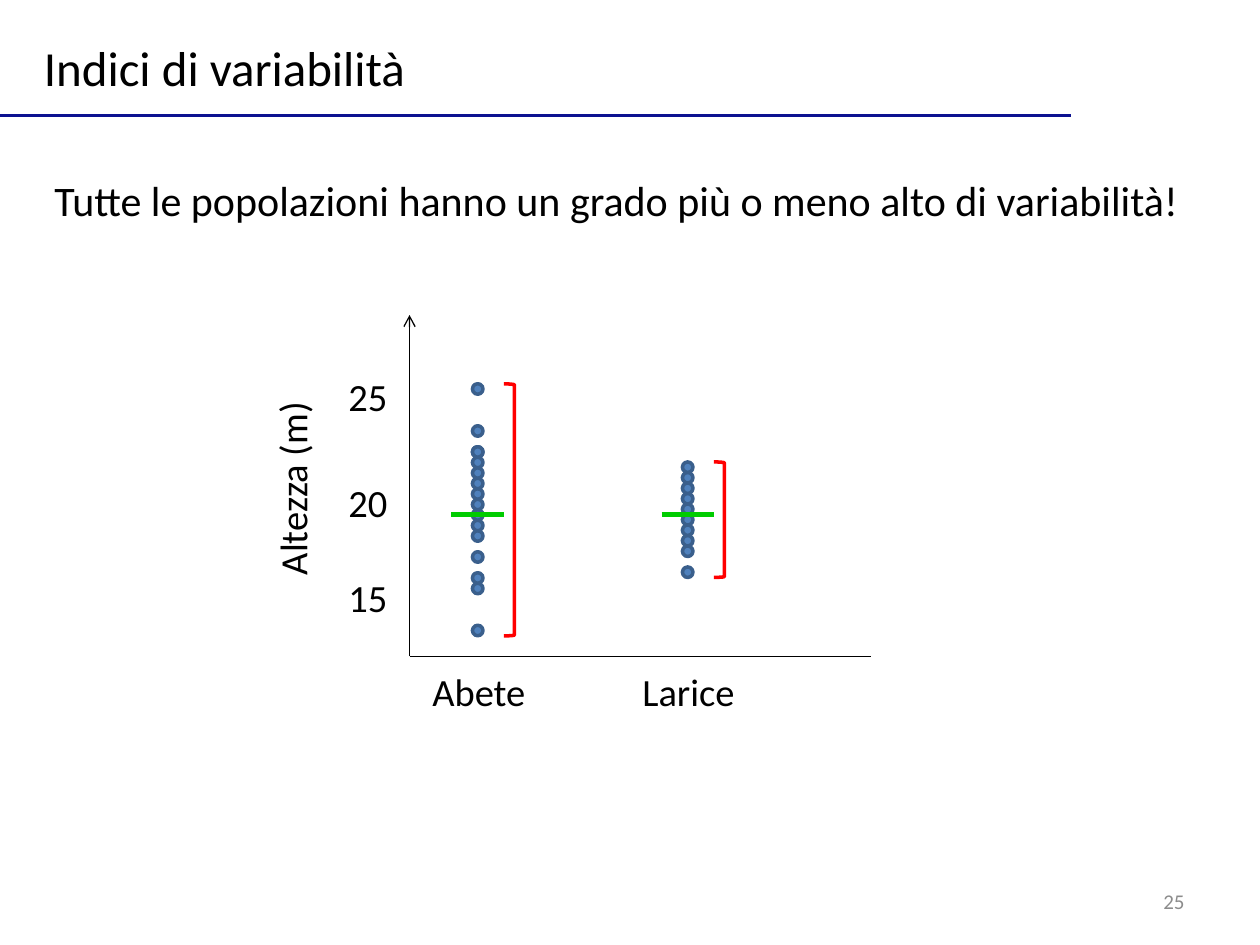
from dataclasses import dataclass

from lxml import etree
from pptx import Presentation
from pptx import util as u
from pptx.dml.color import RGBColor
from pptx.enum import shapes, text
from pptx.oxml import ns

COLORS = {"ink": "000000", "muted": "8C8C8C", "rule": "0C1290", "dot": "4F81BD",
          "dot_edge": "3A5F8C", "range": "FF0000", "mean": "00CC00"}
STEP = 6
MEAN_Y = 294


@dataclass
class Label:
    words: str
    left: float
    top: float
    width: float
    height: float = 34
    size: float = 22
    color: str = "ink"
    align: text.PP_ALIGN = text.PP_ALIGN.LEFT
    anchor: text.MSO_ANCHOR = text.MSO_ANCHOR.MIDDLE
    wrap: bool = True
    rotation: float = 0


@dataclass
class Rule:
    x1: float
    y1: float
    x2: float
    y2: float
    color: str = "ink"
    width: float = 0.75
    arrow: bool = False


@dataclass
class Species:
    name: str
    left: float
    label_width: float
    lowest: float
    steps: tuple[int, ...]
    range_top: float
    range_height: float


LABELS = [
    Label("25", 516, 500.5, 168, 28.75, 12, "muted", text.PP_ALIGN.RIGHT),
    Label("Indici di variabilità", 18, 18, 223, 41, 28, wrap=False),
    Label("Tutte le popolazioni hanno un grado più o meno alto di variabilità!",
          24, 96, 666, 36, 24, anchor=text.MSO_ANCHOR.TOP),
    Label("Altezza (m)", 100.8, 252.7, 132, rotation=270),
    Label("15", 192, 324, 48),
    Label("20", 192, 270, 48),
    Label("25", 192, 209.5, 48),
]
RULES = [
    Rule(0, 66, 612, 66, "rule", 2),
    Rule(234, 375, 234, 180, arrow=True),
    Rule(234, 375, 498, 375),
]
SPECIES = [
    Species("Abete", 240, 84, 357.3,
            (0, 4, 5, 7, 9, 10, 11, 12, 13, 14, 15, 16, 17, 17, 19, 23), 219.4, 144),
    Species("Larice", 360, 90, 324, (0, 2, 3, 4, 5, 6, 7, 8, 9, 10), 264, 66),
]


def rgb(name: str) -> RGBColor:
    """Return the named colour."""
    return RGBColor.from_string(COLORS[name])


def set_all(obj: object, values: dict) -> None:
    """Set every attribute in values on obj."""
    for name, value in values.items():
        setattr(obj, name, value)


def add_label(sl, label: Label) -> None:
    """Draw one text label."""
    sp = sl.shapes.add_textbox(*map(u.Pt, (label.left, label.top, label.width, label.height)))
    sp.rotation = label.rotation
    tf = sp.text_frame
    set_all(tf, {"word_wrap": label.wrap, "vertical_anchor": label.anchor,
                 "auto_size": text.MSO_AUTO_SIZE.SHAPE_TO_FIT_TEXT})
    p = tf.paragraphs[0]
    p.alignment = label.align
    r = p.add_run()
    r.text = label.words
    set_all(r.font, {"name": "Calibri", "size": u.Pt(label.size)})
    r.font.color.rgb = rgb(label.color)


def add_rule(sl, rule: Rule) -> None:
    """Draw one straight line, with an arrowhead at its end if asked."""
    sp = sl.shapes.add_connector(shapes.MSO_CONNECTOR.STRAIGHT,
                                 *map(u.Pt, (rule.x1, rule.y1, rule.x2, rule.y2)))
    sp.line.width = u.Pt(rule.width)
    sp.line.color.rgb = rgb(rule.color)
    if rule.arrow:
        etree.SubElement(sp.line._get_or_add_ln(), ns.qn("a:tailEnd"), type="arrow")
    etree.SubElement(sp._element.spPr, ns.qn("a:effectLst"))


def add_outline(sl, kind: shapes.MSO_SHAPE, box: tuple[float, ...], line: str,
                fill: str | None = None) -> None:
    """Draw one preset shape with a two-point line."""
    sp = sl.shapes.add_shape(kind, *map(u.Pt, box))
    sp.shadow.inherit = False
    if fill:
        sp.fill.solid()
        sp.fill.fore_color.rgb = rgb(fill)
    else:
        sp.fill.background()
    sp.line.width = u.Pt(2)
    sp.line.color.rgb = rgb(line)


def add_species(sl, species: Species) -> None:
    """Draw the dots, range bracket, mean line and name of one species."""
    x = species.left
    for step in species.steps:
        box = (x + 30, species.lowest - step * STEP, STEP, STEP)
        add_outline(sl, shapes.MSO_SHAPE.OVAL, box, "dot_edge", "dot")
    box = (x + 48, species.range_top, STEP, species.range_height)
    add_outline(sl, shapes.MSO_SHAPE.RIGHT_BRACKET, box, "range")
    add_rule(sl, Rule(x + 18, MEAN_Y, x + 48, MEAN_Y, "mean", 3))
    add_label(sl, Label(species.name, x, 378, species.label_width))


def main() -> None:
    """Build and save the slide."""
    prs = Presentation()
    set_all(prs, {"slide_width": u.Pt(720), "slide_height": u.Pt(540)})
    sl = prs.slides.add_slide(prs.slide_layouts[6])
    for draw, items in ((add_label, LABELS), (add_rule, RULES), (add_species, SPECIES)):
        for item in items:
            draw(sl, item)
    prs.save("out.pptx")


if __name__ == "__main__":
    main()
